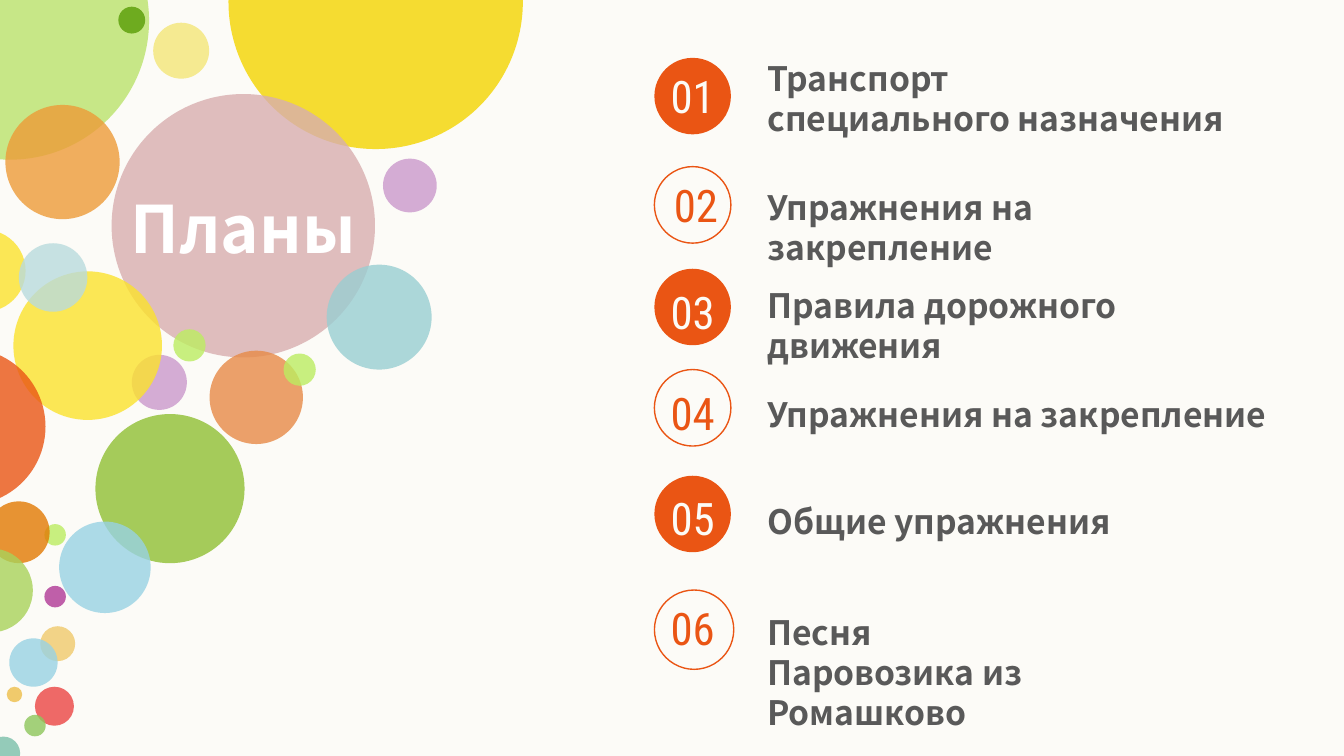
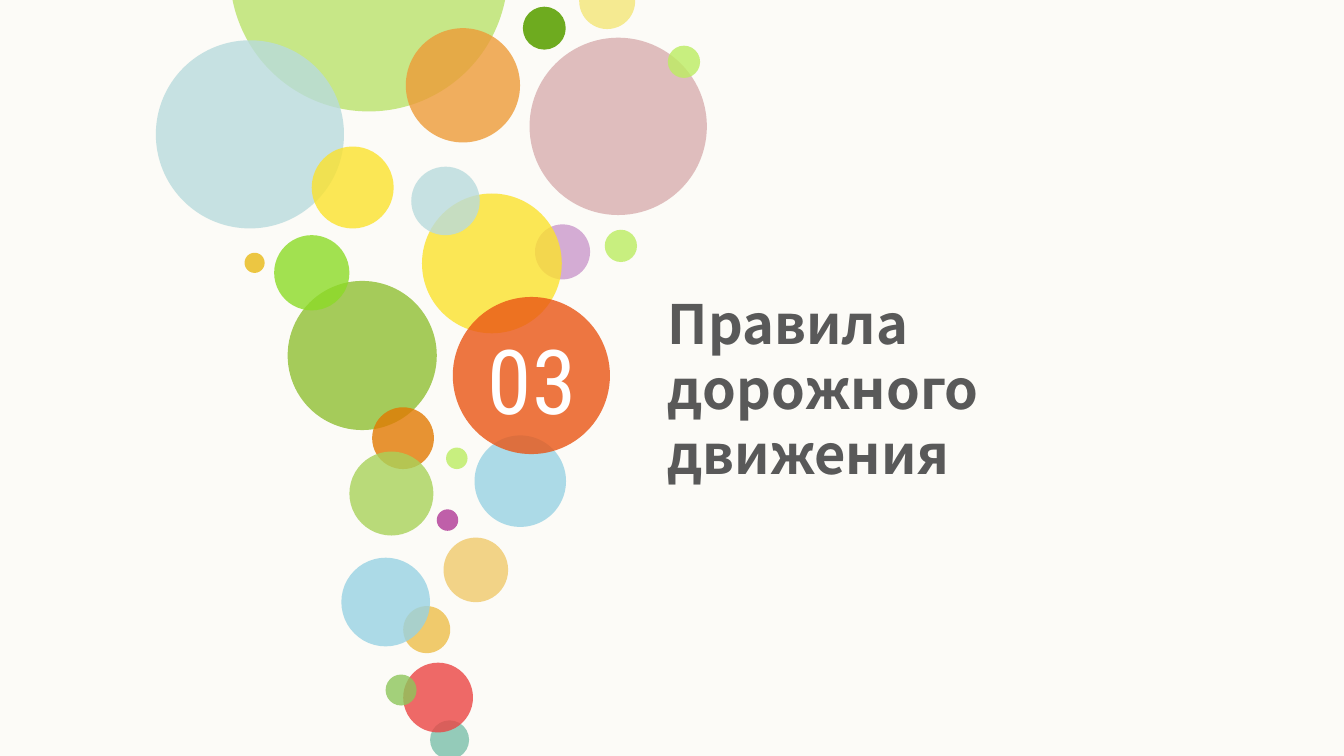
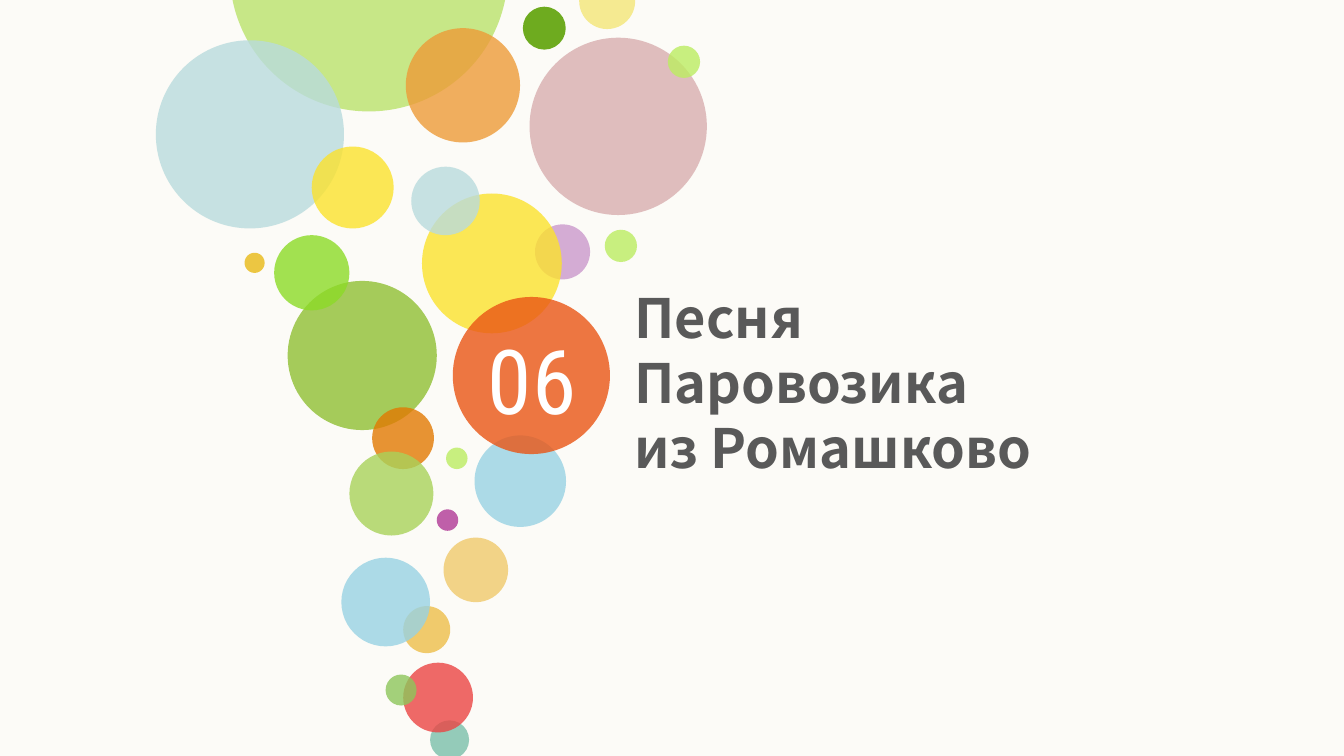
from dataclasses import dataclass

from lxml import etree
from pptx import Presentation
from pptx.dml.color import RGBColor
from pptx.enum import shapes, text
from pptx.oxml import ns
from pptx.slide import Slide
from pptx.util import Pt

COLORS = {
    "paper": "FCFBF7", "white": "FFFFFF", "ink": "595959", "accent": "EA5514",
    "pale_lime": "BAE36B", "forest": "6EAB1F", "apricot": "ED9B38", "cream": "F5EA91",
    "sun": "F4D500", "rose": "D8AEAF", "teal": "99CED2", "lilac": "CB99CC",
    "copper": "E78A47", "leaf": "A5CB5A", "lime": "BCED61", "yellow": "FBE22D",
    "magenta": "B03896", "sand": "F0CA6C", "sea": "7BBFAA", "red": "EB4544",
    "grass": "8DC65B", "sky": "98D2E3", "mist": "B9DBDD", "orange": "E27902",
    "olive": "A9D25A", "bright_green": "8CDB27", "gold": "E9B915",
}
HEADING_FONT = "Noto Sans CJK SC"
NUMBER_FONT = "Roboto Condensed"

BADGE_LEFT = 350.6
BADGE_SIZE = 41
ITEM_LEFT = 411.1


@dataclass(frozen=True)
class Bubble:
    left: float
    top: float
    size: float
    color: str
    opacity: int = 80


@dataclass(frozen=True)
class TextStyle:
    size: float
    font: str
    color: str
    bold: bool = False
    centered: bool = False


@dataclass(frozen=True)
class AgendaItem:
    lines: tuple[str, ...]
    badge_top: float
    number_top: float
    title_top: float
    title_width: float
    badge_size: float = BADGE_SIZE
    number_shift: float = 0


@dataclass(frozen=True)
class Section:
    number: str
    lines: tuple[str, ...]
    left: float
    top: float
    width: float


AGENDA_BUBBLES = (
    Bubble(-69.1, -63.4, 149, "pale_lime"),
    Bubble(63.4, 3.6, 14.4, "forest", 100),
    Bubble(2.9, 56.2, 61.2, "apricot"),
    Bubble(82.1, 12.2, 30, "cream", 100),
    Bubble(122.4, -77.8, 157.7, "sun"),
    Bubble(59.8, 50.4, 141.1, "rose"),
    Bubble(175, 141.8, 56.2, "teal"),
    Bubble(205.2, 85, 28.8, "lilac"),
    Bubble(112.3, 187.9, 50, "copper"),
    Bubble(51.1, 221.8, 79.9, "leaf", 100),
    Bubble(151.9, 189.4, 17.3, "lime"),
    Bubble(92.9, 176.4, 17.3, "lime"),
    Bubble(70.6, 190.1, 29.5, "lilac"),
    Bubble(7.2, 145.4, 79.6, "yellow"),
    Bubble(-30.2, 123.1, 43.9, "yellow"),
    Bubble(23.8, 280.8, 11.5, "lime"),
    Bubble(23.8, 313.9, 11.5, "magenta"),
    Bubble(21.6, 335.5, 18.7, "sand"),
    Bubble(3.6, 367.9, 8.3, "sand", 100),
    Bubble(-7.2, 394.6, 18, "sea"),
    Bubble(18.7, 367.9, 20.9, "red"),
    Bubble(13, 383, 11.5, "grass"),
    Bubble(5, 342, 25.9, "sky"),
    Bubble(10.1, 130.3, 36.7, "mist"),
    Bubble(31.7, 279.4, 49, "sky"),
    Bubble(-6.5, 268.6, 33.1, "orange"),
    Bubble(-27.4, 293.8, 45, "olive"),
    Bubble(-59.8, 186.5, 84.2, "accent"),
)

SECTION_BUBBLES = (
    Bubble(123.1, -89.3, 149, "pale_lime"),
    Bubble(280.1, 3.6, 23, "forest", 100),
    Bubble(83.5, 21.6, 100.8, "mist"),
    Bubble(217.4, 15.1, 61.2, "apricot"),
    Bubble(310.3, -14.4, 30, "cream", 100),
    Bubble(283.7, 20.2, 95, "rose"),
    Bubble(154.1, 150.5, 79.9, "leaf", 100),
    Bubble(357.8, 24.5, 17.3, "lime"),
    Bubble(324, 123.1, 17.3, "lime"),
    Bubble(286.6, 120.2, 29.5, "lilac"),
    Bubble(226.1, 103.7, 74.9, "yellow"),
    Bubble(167, 78.5, 43.9, "yellow"),
    Bubble(146.9, 126, 40.3, "bright_green"),
    Bubble(131, 135.4, 10.8, "gold"),
    Bubble(239, 239.8, 11.5, "lime"),
    Bubble(234, 272.9, 11.5, "magenta"),
    Bubble(237.6, 288, 34.6, "sand"),
    Bubble(216, 324.7, 25.2, "sand", 100),
    Bubble(230.4, 385.9, 20.9, "sea"),
    Bubble(216, 355, 37.4, "red"),
    Bubble(206.6, 361.4, 16.6, "grass"),
    Bubble(182.9, 298.8, 47.5, "sky"),
    Bubble(220.3, 89.3, 36.7, "mist"),
    Bubble(254.2, 233.3, 49, "sky"),
    Bubble(199.4, 218.2, 33.1, "orange"),
    Bubble(187.2, 241.9, 45, "olive"),
    Bubble(242.6, 159.1, 84.2, "accent"),
)

AGENDA = (
    AgendaItem(("Транспорт", "специального назначения"), 31, 36.7, 31, 283.7),
    AgendaItem(("Упражнения на закрепление",), 89.3, 95, 100.1, 262.8, number_shift=1.8),
    AgendaItem(("Правила дорожного движения",), 144, 152.6, 152.6, 260.6),
    AgendaItem(("Упражнения на закрепление",), 198, 206.6, 211, 280.1),
    AgendaItem(("Общие упражнения",), 254.9, 262.8, 268.6, 198.7),
    AgendaItem(("Песня", "Паровозика из Ромашково"), 316.1, 321.8, 327.6, 240.5,
               badge_size=42.5),
)

SECTIONS = (
    Section("03", ("Правила дорожного движения",), 357.8, 155.5, 218.9),
    Section("06", ("Песня", "Паровозика", "из Ромашково"), 339.8, 152.6, 385.9),
)

AGENDA_TITLE = TextStyle(35, HEADING_FONT, "white", bold=True, centered=True)
ITEM_TITLE = TextStyle(18, HEADING_FONT, "ink", bold=True)
SECTION_TITLE = TextStyle(29, HEADING_FONT, "ink", bold=True)
SECTION_NUMBER = TextStyle(48, NUMBER_FONT, "white", centered=True)


def rgb(name: str) -> RGBColor:
    return RGBColor.from_string(COLORS[name])


def add_slide(deck: Presentation) -> Slide:
    slide = deck.slides.add_slide(deck.slide_layouts[6])
    slide.background.fill.solid()
    slide.background.fill.fore_color.rgb = rgb("paper")
    return slide


def add_circle(slide: Slide, circle: Bubble, filled: bool = True) -> None:
    """Draw a borderless disc, or a thin ring when it is not filled."""
    oval = slide.shapes.add_shape(shapes.MSO_SHAPE.OVAL, Pt(circle.left), Pt(circle.top),
                                  Pt(circle.size), Pt(circle.size))
    oval.shadow.inherit = False
    if not filled:
        oval.fill.background()
        oval.line.color.rgb = rgb(circle.color)
        oval.line.width = Pt(0.75)
        return
    oval.line.fill.background()
    oval.fill.solid()
    oval.fill.fore_color.rgb = rgb(circle.color)
    if circle.opacity < 100:
        color = oval.fill._xPr.find(ns.qn("a:solidFill"))[0]
        etree.SubElement(color, ns.qn("a:alpha"), val=str(circle.opacity * 1000))


def add_text(slide: Slide, lines: tuple[str, ...], left: float, top: float,
             width: float, height: float, style: TextStyle) -> None:
    frame = slide.shapes.add_textbox(Pt(left), Pt(top), Pt(width), Pt(height)).text_frame
    frame.margin_left = frame.margin_right = frame.margin_top = frame.margin_bottom = 0
    frame.word_wrap = True
    frame.auto_size = text.MSO_AUTO_SIZE.SHAPE_TO_FIT_TEXT
    for index, line in enumerate(lines):
        paragraph = frame.add_paragraph() if index else frame.paragraphs[0]
        if style.centered:
            paragraph.alignment = text.PP_ALIGN.CENTER
        run = paragraph.add_run()
        run.text = line
        run.font.size = Pt(style.size)
        run.font.name = style.font
        run.font.bold = style.bold
        run.font.color.rgb = rgb(style.color)


def add_agenda_item(slide: Slide, position: int, item: AgendaItem) -> None:
    """Draw a numbered badge with its title; odd badges are solid, even ones are rings."""
    solid = position % 2 == 1
    add_circle(slide, Bubble(BADGE_LEFT, item.badge_top, item.badge_size, "accent", 100), solid)
    number = TextStyle(24, NUMBER_FONT, "paper" if solid else "accent", centered=True)
    add_text(slide, (f"{position:02}",), BADGE_LEFT + item.number_shift, item.number_top,
             BADGE_SIZE, 28.8, number)
    add_text(slide, item.lines, ITEM_LEFT, item.title_top, item.title_width,
             20.9 * len(item.lines), ITEM_TITLE)


def build_agenda(deck: Presentation) -> None:
    slide = add_slide(deck)
    for bubble in AGENDA_BUBBLES:
        add_circle(slide, bubble)
    add_text(slide, ("Планы",), 68.4, 100.8, 123.8, 41, AGENDA_TITLE)
    for position, item in enumerate(AGENDA, start=1):
        add_agenda_item(slide, position, item)


def build_section(deck: Presentation, section: Section) -> None:
    slide = add_slide(deck)
    for bubble in SECTION_BUBBLES:
        add_circle(slide, bubble)
    add_text(slide, (section.number,), 256.3, 174.2, 57.6, 58.3, SECTION_NUMBER)
    add_text(slide, section.lines, section.left, section.top, section.width, 102.2,
             SECTION_TITLE)


def main() -> None:
    deck = Presentation()
    deck.slide_width, deck.slide_height = Pt(720), Pt(405)
    build_agenda(deck)
    for section in SECTIONS:
        build_section(deck, section)
    deck.save("out.pptx")


if __name__ == "__main__":
    main()
